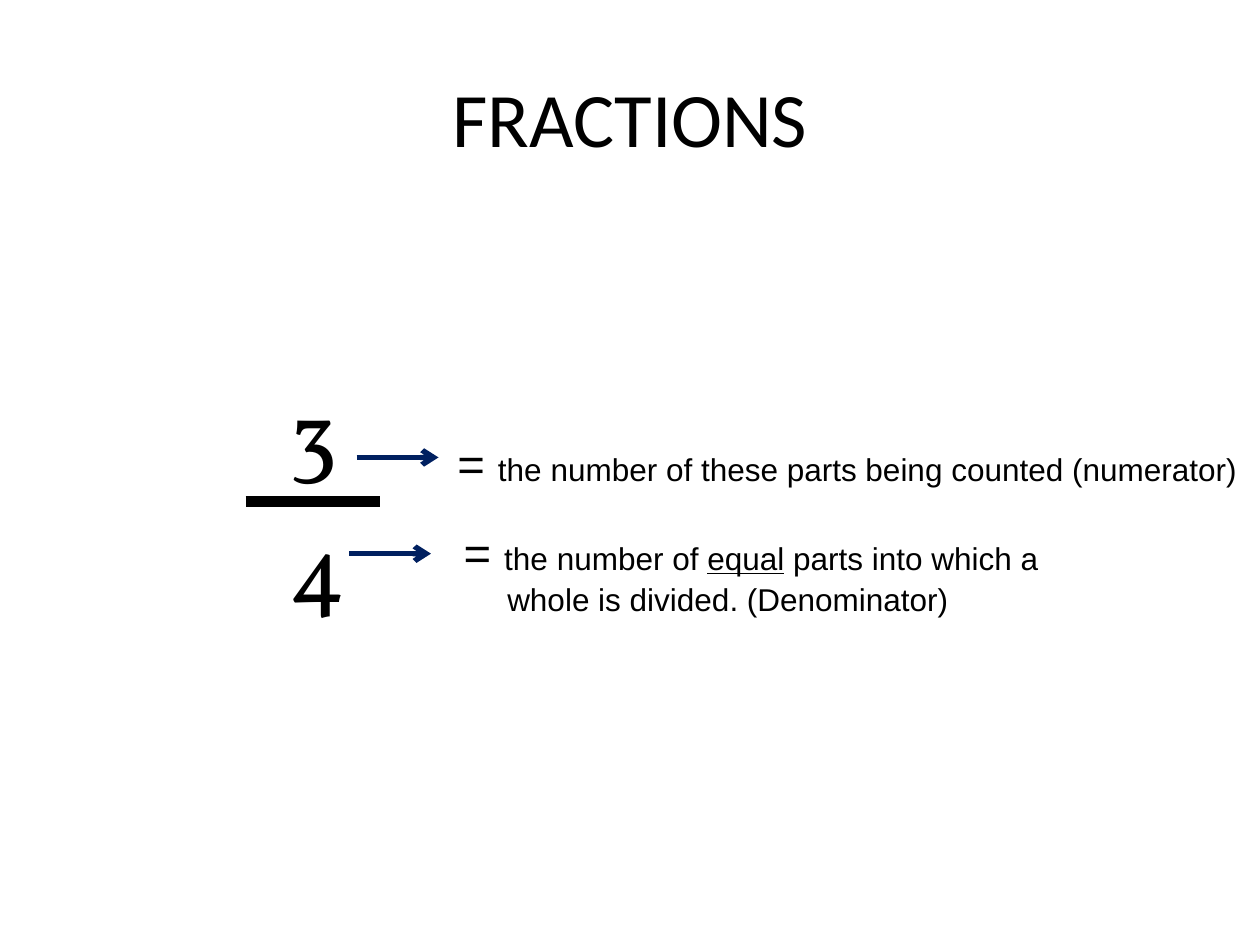
from lxml import etree
from pptx import Presentation
from pptx.dml.color import RGBColor
from pptx.enum.shapes import MSO_CONNECTOR
from pptx.enum.text import MSO_ANCHOR, MSO_AUTO_SIZE, PP_ALIGN
from pptx.oxml.ns import qn
from pptx.util import Pt

STRAIGHT = MSO_CONNECTOR.STRAIGHT
CENTER = PP_ALIGN.CENTER
MIDDLE = MSO_ANCHOR.MIDDLE
FIT_SHAPE = MSO_AUTO_SIZE.SHAPE_TO_FIT_TEXT
NO_FIT = MSO_AUTO_SIZE.NONE
TITLE_ONLY = 5

COLORS = {"text": "000000", "arrow": "002060"}


def add_run(paragraph, text, font="Arial", size=18, underline=None):
    run = paragraph.add_run()
    run.text = text
    run.font.name = font
    run.font.size = Pt(size)
    run.font.underline = underline
    run.font.color.rgb = RGBColor.from_string(COLORS["text"])


def add_text_box(slide, left, top, width, height, wrap=False):
    """Add an empty text box and return its text frame."""
    shape = slide.shapes.add_textbox(Pt(left), Pt(top), Pt(width), Pt(height))
    frame = shape.text_frame
    frame.word_wrap = wrap
    frame.auto_size = FIT_SHAPE
    return frame


def add_line(slide, left, top, length, color, weight, arrow=False):
    """Add a horizontal line, with an arrowhead at its right end if asked."""
    line = slide.shapes.add_connector(
        STRAIGHT, Pt(left), Pt(top), Pt(left + length), Pt(top))
    line.line.color.rgb = RGBColor.from_string(COLORS[color])
    line.line.width = Pt(weight)
    if arrow:
        etree.SubElement(line.line._get_or_add_ln(), qn("a:tailEnd"), type="arrow")
    etree.SubElement(line._element.spPr, qn("a:effectLst"))


def add_title(slide, text, left, top, width, height):
    title = slide.shapes.title
    title.left, title.top = Pt(left), Pt(top)
    title.width, title.height = Pt(width), Pt(height)
    frame = title.text_frame
    frame.vertical_anchor = MIDDLE
    frame.auto_size = NO_FIT
    paragraph = frame.paragraphs[0]
    paragraph.alignment = CENTER
    add_run(paragraph, text, font="Calibri", size=44)


def add_fraction(slide, left, top, numerator, denominator):
    bar_top = top + 76.3
    for digit, digit_top, width in ((numerator, top, 39.6),
                                    (denominator, bar_top, 43.2)):
        frame = add_text_box(slide, left + 18, digit_top, width, 72.7)
        add_run(frame.paragraphs[0], digit, font="Vollkorn", size=54)
    add_line(slide, left, bar_top, 77, "text", 6)


def add_explanation(slide, left, top, width, height, arrow_left, arrow_top,
                    parts, second_line=None):
    """Add an arrow and its meaning; parts are (text, underline) pairs."""
    frame = add_text_box(slide, left, top, width, height, wrap=bool(second_line))
    paragraph = frame.paragraphs[0]
    add_run(paragraph, "= ", size=27)
    for text, underline in parts:
        add_run(paragraph, text, underline=underline)
    if second_line:
        paragraph = frame.add_paragraph()
        properties = paragraph._p.get_or_add_pPr()
        properties.set("marL", str(Pt(25)))
        properties.set("indent", "0")
        add_run(paragraph, second_line)
    add_line(slide, left + arrow_left, top + arrow_top, 46.8, "arrow", 3, arrow=True)


def main():
    presentation = Presentation()
    presentation.slide_width, presentation.slide_height = Pt(720), Pt(540)
    slide = presentation.slides.add_slide(presentation.slide_layouts[TITLE_ONLY])
    add_title(slide, "FRACTIONS", 36, 21.6, 648, 90)
    add_fraction(slide, 140.4, 210.2, "3", "4")
    add_explanation(
        slide, 254.2, 244.8, 464.4, 39.6, -50.4, 16.6,
        [("the number of these parts being counted (numerator)", None)])
    add_explanation(
        slide, 257.8, 295.2, 352, 94.3, -58.3, 21.2,
        [("the number of ", None), ("equal", True), (" parts into which a", None)],
        second_line="whole is divided. (Denominator)")
    presentation.save("out.pptx")


if __name__ == "__main__":
    main()
